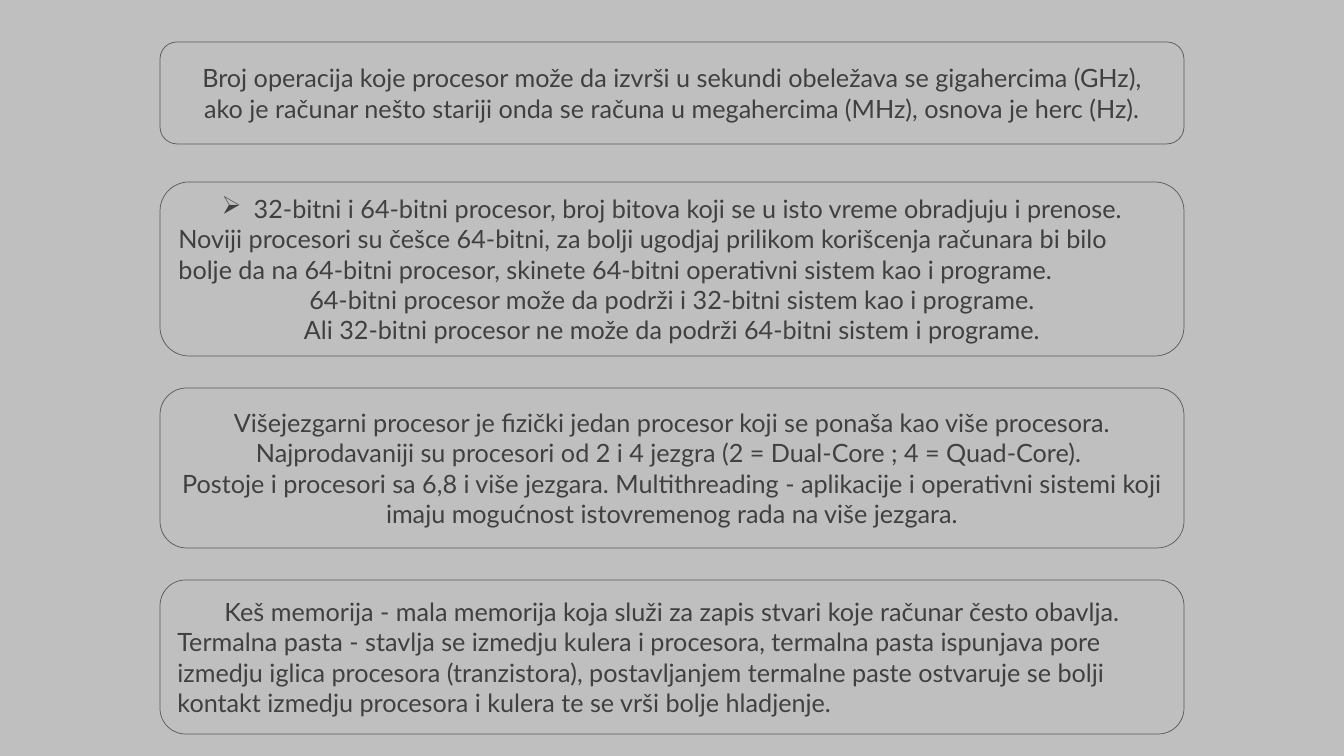
import pptx
import pptx.util
import pptx.dml.color
import pptx.enum.shapes
import pptx.enum.text
import pptx.oxml.ns
from dataclasses import dataclass
from lxml import etree

SLIDE_W, SLIDE_H = 1344, 756
EMU_PER_PX = 12192000 / SLIDE_W
BOX_LEFT, BOX_WIDTH = 160, 1024
BULLET_INDENT = 32


@dataclass(frozen=True)
class Theme:
    background: str = "BFBFBF"
    outline: str = "595959"
    text: str = "404040"
    font: str = "Lato"
    body_size: int = 18
    line_width: float = 0.5


THEME = Theme()
CENTER = pptx.enum.text.PP_ALIGN.CENTER
LEFT = pptx.enum.text.PP_ALIGN.LEFT

BOXES = [
    (42, 102, [
        ("Broj operacija koje procesor može da izvrši u sekundi obeležava se gigahercima (GHz),", CENTER),
        ("ako je računar nešto stariji onda se računa u megahercima (MHz), osnova je herc (Hz).", CENTER),
    ]),
    (182, 174, [
        ("32-bitni i 64-bitni procesor, broj bitova koji se u isto vreme obradjuju i prenose.", CENTER),
        ("Noviji procesori su češce 64-bitni, za bolji ugodjaj prilikom korišcenja računara bi bilo "
         "bolje da na 64-bitni procesor, skinete 64-bitni operativni sistem kao i programe.", LEFT),
        ("64-bitni procesor može da podrži i 32-bitni sistem kao i programe.", CENTER),
        ("Ali 32-bitni procesor ne može da podrži 64-bitni sistem i programe.", CENTER),
    ]),
    (388, 160, [
        ("Višejezgarni procesor je fizički jedan procesor koji se ponaša kao više procesora.", CENTER),
        ("Najprodavaniji su procesori od 2 i 4 jezgra (2 = Dual-Core ; 4 = Quad-Core). ", CENTER),
        ("Postoje i procesori sa 6,8 i više jezgara. Multithreading - aplikacije i operativni sistemi "
         "koji imaju mogućnost istovremenog rada na više jezgara.", CENTER),
    ]),
    (580, 154, [
        ("Keš memorija - mala memorija koja služi za zapis stvari koje računar često obavlja.", CENTER),
        ("Termalna pasta - stavlja se izmedju kulera i procesora, termalna pasta ispunjava "
         "pore izmedju iglica procesora (tranzistora), postavljanjem termalne paste ostvaruje se bolji "
         "kontakt izmedju procesora i kulera te se vrši bolje hladjenje.", LEFT),
    ]),
]


def px(n):
    return pptx.util.Emu(round(n * EMU_PER_PX))


def rgb(value):
    return pptx.dml.color.RGBColor.from_string(value)


def fill_solid(fill, color):
    fill.solid()
    fill.fore_color.rgb = rgb(color)


def add_paragraph(p, text, align):
    p.text = text
    p.alignment = align
    for r in p.runs:
        r.font.name = THEME.font
        r.font.size = pptx.util.Pt(THEME.body_size)
        r.font.color.rgb = rgb(THEME.text)


def add_bullet(p, char):
    pPr = p._p.get_or_add_pPr()
    pPr.set("marL", str(px(BULLET_INDENT)))
    pPr.set("indent", str(px(-BULLET_INDENT)))
    etree.SubElement(pPr, pptx.oxml.ns.qn("a:buChar")).set("char", char)


def add_text_box(slide, top, height, lines):
    sp = slide.shapes.add_shape(
        pptx.enum.shapes.MSO_SHAPE.ROUNDED_RECTANGLE,
        px(BOX_LEFT), px(top), px(BOX_WIDTH), px(height))
    sp.shadow.inherit = False
    fill_solid(sp.fill, THEME.background)
    sp.line.color.rgb = rgb(THEME.outline)
    sp.line.width = pptx.util.Pt(THEME.line_width)
    tf = sp.text_frame
    tf.word_wrap = True
    tf.vertical_anchor = pptx.enum.text.MSO_ANCHOR.MIDDLE
    for i, (text, align) in enumerate(lines):
        p = tf.add_paragraph() if i else tf.paragraphs[0]
        add_paragraph(p, text, align)
    return sp


def main():
    prs = pptx.Presentation()
    prs.slide_width, prs.slide_height = px(SLIDE_W), px(SLIDE_H)
    slide = prs.slides.add_slide(prs.slide_layouts[6])
    fill_solid(slide.background.fill, THEME.background)
    frequency, bits, cores, cache = [add_text_box(slide, *box) for box in BOXES]
    add_bullet(bits.text_frame.paragraphs[0], "➢")
    prs.save("out.pptx")


if __name__ == "__main__":
    main()
